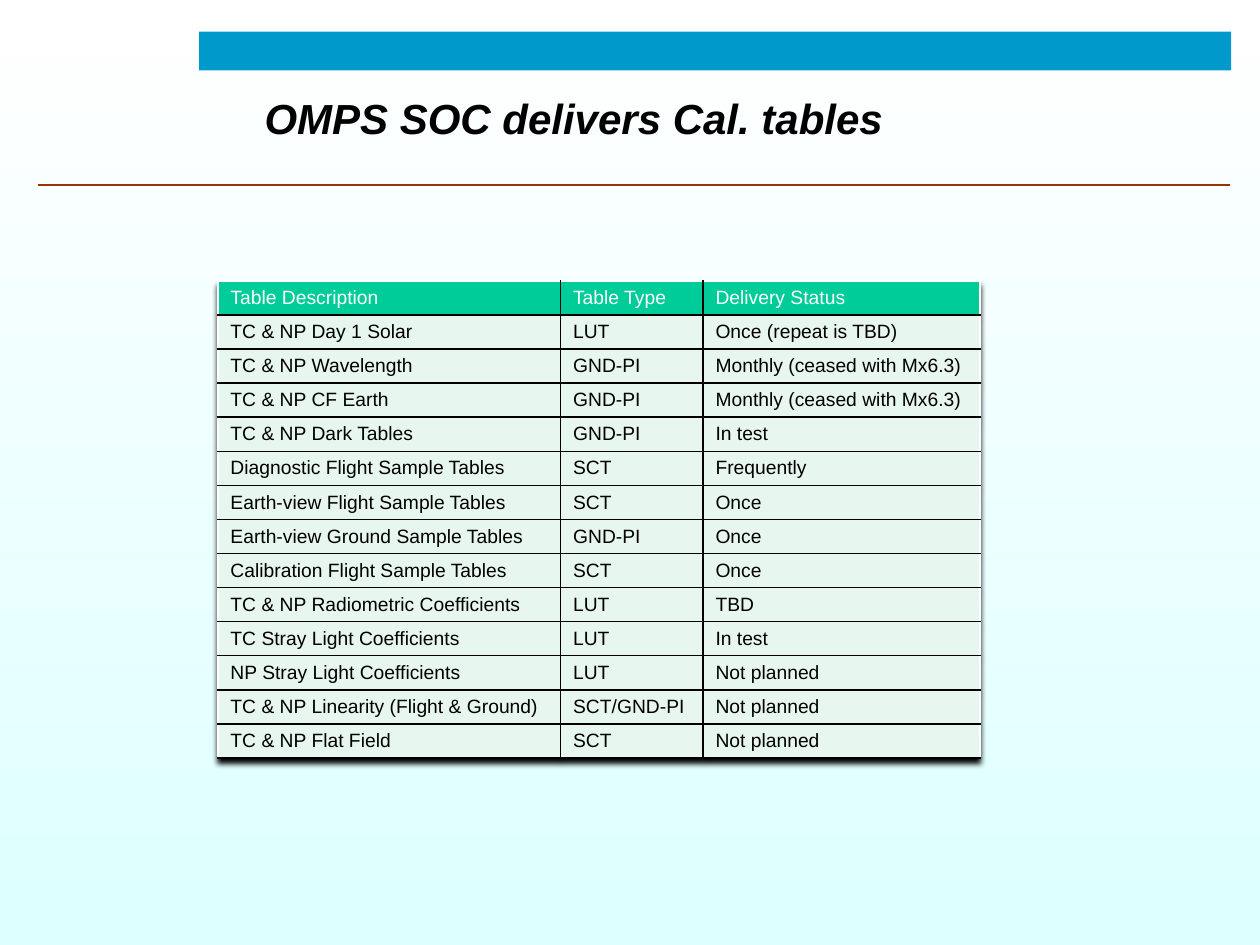
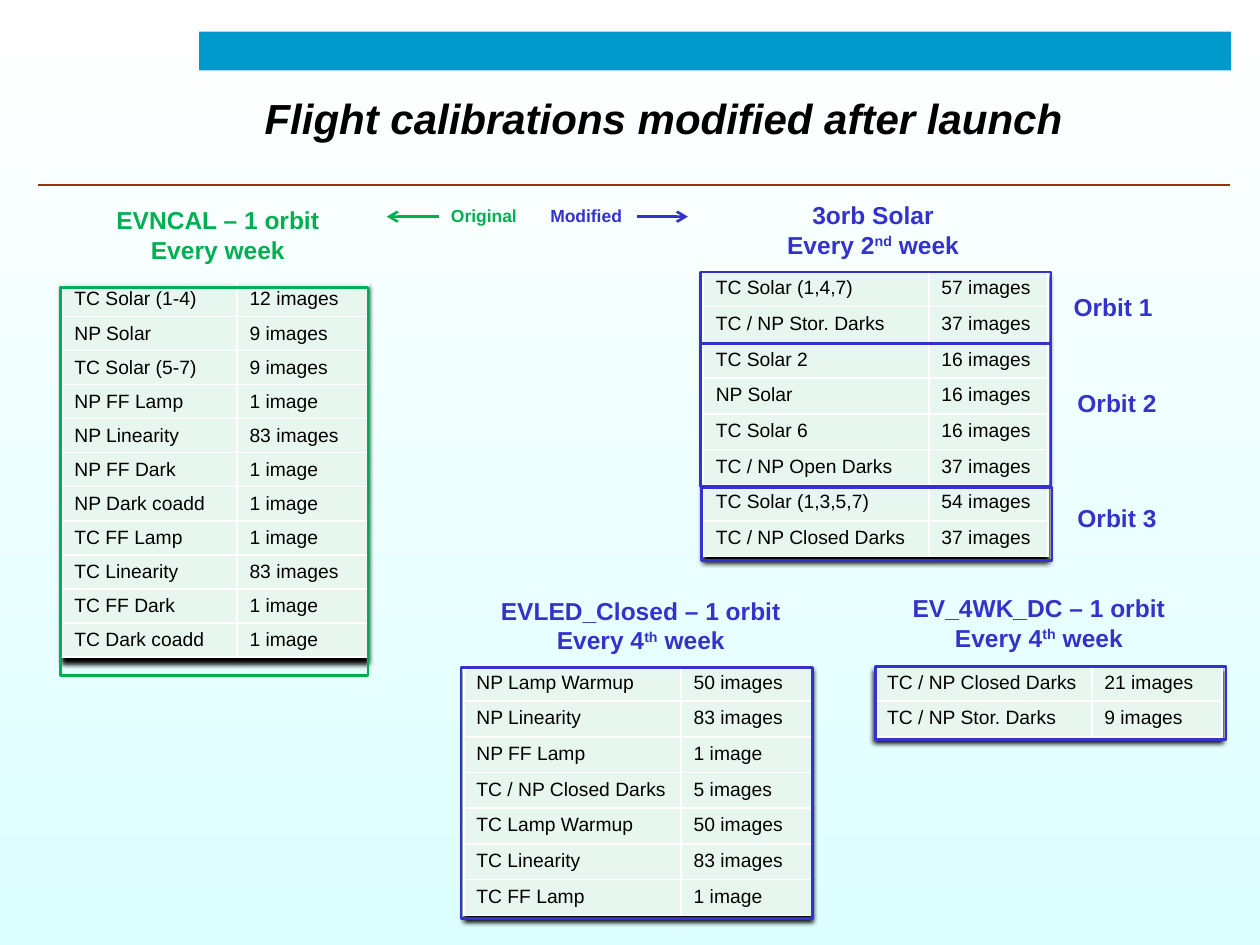
from dataclasses import dataclass
from itertools import product

import lxml.etree
import pptx
import pptx.dml.color
import pptx.enum.shapes
import pptx.enum.text
import pptx.oxml.ns
import pptx.util

Pt = pptx.util.Pt
qn = pptx.oxml.ns.qn
Align = pptx.enum.text.PP_ALIGN
Anchor = pptx.enum.text.MSO_ANCHOR
Fit = pptx.enum.text.MSO_AUTO_SIZE

# Shared look
FONT = "Arial"
BLACK, WHITE = "000000", "FFFFFF"
BLUE, GREEN = "3333CC", "00B050"
BAND, RULE = "0099CC", "993300"
HEAD, BODY, SKY = "00CC99", "E7F6EF", "DDFFFF"
PLAIN = "{2D5ABB26-0587-4C30-8999-92F81FD0307C}"


@dataclass
class Box:
    left: float
    top: float
    width: float
    height: float

    def place(self) -> tuple:
        return tuple(Pt(v) for v in (self.left, self.top, self.width, self.height))


@dataclass
class Grid:
    left: float
    top: float
    cols: tuple
    row: float
    cells: list
    head: bool = False


@dataclass
class Label:
    text: str
    box: Box
    color: str = BLUE
    size: float = 14
    align: int = Align.CENTER


@dataclass
class Frame:
    box: Box
    color: str = BLUE


@dataclass
class Arrow:
    start: float
    end: float
    color: str


def rgb(code: str) -> pptx.dml.color.RGBColor:
    return pptx.dml.color.RGBColor.from_string(code)


def sub(node, tag: str, **attrs):
    return lxml.etree.SubElement(node, qn(tag), attrs)


def write(frame, text: str, size: float = 11, color: str = BLACK,
          bold: bool = False, italic: bool = False, align=Align.LEFT) -> None:
    """Fill a text frame; a part between carets is raised."""
    for num, line in enumerate(text.split("\n")):
        para = frame.add_paragraph() if num else frame.paragraphs[0]
        para.alignment = align
        for pos, part in enumerate(line.split("^")):
            run = para.add_run()
            run.text = part
            font = run.font
            font.name, font.size = FONT, Pt(size)
            font.bold, font.italic = bold, italic
            font.color.rgb = rgb(color)
            if pos % 2:
                font._element.set("baseline", "30000")


def add_rect(slide, box: Box, fill: str = "", line: str = "") -> None:
    shape = slide.shapes.add_shape(
        pptx.enum.shapes.MSO_SHAPE.RECTANGLE, *box.place())
    shape.shadow.inherit = False
    if fill:
        shape.fill.solid()
        shape.fill.fore_color.rgb = rgb(fill)
    else:
        shape.fill.background()
    if line:
        shape.line.color.rgb = rgb(line)
        shape.line.width = Pt(1.5)
    else:
        shape.line.fill.background()


def add_line(slide, start: float, end: float, y: float, color: str,
             arrow: bool = False) -> None:
    line = slide.shapes.add_connector(
        pptx.enum.shapes.MSO_CONNECTOR.STRAIGHT, Pt(start), Pt(y), Pt(end), Pt(y))
    line.line.color.rgb = rgb(color)
    line.line.width = Pt(1.5)
    if arrow:
        sub(line.line._get_or_add_ln(), "a:tailEnd", type="arrow")
    sub(line._element.spPr, "a:effectLst")


def add_label(slide, label: Label) -> None:
    frame = slide.shapes.add_textbox(*label.box.place()).text_frame
    frame.word_wrap = True
    frame.auto_size = Fit.SHAPE_TO_FIT_TEXT
    write(frame, label.text, size=label.size, color=label.color, bold=True,
          align=label.align)


def add_edge(cell, side: str, color: str) -> None:
    edge = sub(cell._tc.get_or_add_tcPr(), f"a:ln{side}", w=str(Pt(1)))
    sub(sub(edge, "a:solidFill"), "a:srgbClr", val=color)


def add_grid(slide, grid: Grid) -> None:
    rows, cols = len(grid.cells), len(grid.cols)
    box = Box(grid.left, grid.top, sum(grid.cols), rows * grid.row)
    table = slide.shapes.add_table(rows, cols, *box.place()).table
    table.first_row = table.horz_banding = False

    # Plain style with a drop shadow
    props = table._tbl.tblPr
    props.find(qn("a:tableStyleId")).text = PLAIN
    glow = lxml.etree.Element(qn("a:effectLst"))
    props.insert(0, glow)
    shade = sub(glow, "a:outerShdw", blurRad=str(Pt(3)), dist=str(Pt(3)),
                dir="5400000", rotWithShape="0")
    sub(shade, "a:srgbClr", val=BLACK)

    for col, width in zip(table.columns, grid.cols):
        col.width = Pt(width)
    for row in table.rows:
        row.height = Pt(grid.row)
    inner = BLACK if grid.head else WHITE
    for r, c in product(range(rows), range(cols)):
        cell = table.cell(r, c)
        top = grid.head and r == 0
        outer = {"L": c == 0, "R": c == cols - 1, "T": r == 0, "B": False}
        for side, out in outer.items():
            add_edge(cell, side, WHITE if out else inner)
        cell.fill.solid()
        cell.fill.fore_color.rgb = rgb(HEAD if top else BODY)
        write(cell.text_frame, grid.cells[r][c], color=WHITE if top else BLACK)


def add_page(deck, title: str):
    slide = deck.slides.add_slide(deck.slide_layouts[5])
    add_line(slide, 21.6, 702.7, 105.84, RULE)
    add_rect(slide, Box(113.8, 18, 589.7, 22.3), fill=BAND)
    head = slide.shapes.title
    head.left, head.top, head.width, head.height = Box(144, 36, 498, 62.6).place()
    frame = head.text_frame
    frame.word_wrap = True
    frame.auto_size = Fit.NONE
    frame.vertical_anchor = Anchor.MIDDLE
    write(frame, title, size=24, bold=True, italic=True)
    return slide


def set_sky(deck) -> None:
    fill = deck.slide_master.background.fill
    fill.gradient()
    fill.gradient_angle = 270
    for stop, place, color in zip(fill.gradient_stops, (0, 1), (WHITE, SKY)):
        stop.position = place
        stop.color.rgb = rgb(color)


# Slide 1: delivered tables
TABLES = Grid(124.5, 160.5, (195.8, 81.4, 158.4), 19.47, [
    ("Table Description", "Table Type", "Delivery Status"),
    ("TC & NP Day 1 Solar", "LUT", "Once (repeat is TBD)"),
    ("TC & NP Wavelength", "GND-PI", "Monthly (ceased with Mx6.3)"),
    ("TC & NP CF Earth", "GND-PI", "Monthly (ceased with Mx6.3)"),
    ("TC & NP Dark Tables", "GND-PI", "In test"),
    ("Diagnostic Flight Sample Tables", "SCT", "Frequently"),
    ("Earth-view Flight Sample Tables", "SCT", "Once"),
    ("Earth-view Ground Sample Tables", "GND-PI", "Once"),
    ("Calibration Flight Sample Tables", "SCT", "Once"),
    ("TC & NP Radiometric Coefficients", "LUT", "TBD"),
    ("TC Stray Light Coefficients", "LUT", "In test"),
    ("NP Stray Light Coefficients", "LUT", "Not planned"),
    ("TC & NP Linearity (Flight & Ground)", "SCT/GND-PI", "Not planned"),
    ("TC & NP Flat Field", "SCT", "Not planned"),
], head=True)

# Slide 2: image counts by calibration
COUNTS = [
    Grid(35.3, 161.3, (100.1, 74.9), 19.47, [
        ("TC Solar (1-4)", "12 images"),
        ("NP Solar", "9 images"),
        ("TC Solar (5-7)", "9 images"),
        ("NP FF Lamp", "1 image"),
        ("NP Linearity", "83 images"),
        ("NP FF Dark", "1 image"),
        ("NP Dark coadd", "1 image"),
        ("TC FF Lamp", "1 image"),
        ("TC Linearity", "83 images"),
        ("TC FF Dark", "1 image"),
        ("TC Dark coadd", "1 image"),
    ]),
    Grid(401.8, 154.8, (129, 68), 20.43, [
        ("TC Solar (1,4,7)", "57 images"),
        ("TC / NP Stor. Darks", "37 images"),
        ("TC Solar 2", "16 images"),
        ("NP Solar", "16 images"),
        ("TC Solar 6", "16 images"),
        ("TC / NP Open Darks", "37 images"),
        ("TC Solar (1,3,5,7)", "54 images"),
        ("TC / NP Closed Darks", "37 images"),
    ]),
    Grid(265, 380.2, (124.2, 74.4), 20.43, [
        ("NP Lamp Warmup", "50 images"),
        ("NP Linearity", "83 images"),
        ("NP FF Lamp", "1 image"),
        ("TC / NP Closed Darks", "5 images"),
        ("TC Lamp Warmup", "50 images"),
        ("TC Linearity", "83 images"),
        ("TC FF Lamp", "1 image"),
    ]),
    Grid(499.7, 380.2, (124.2, 74.4), 20.43, [
        ("TC / NP Closed Darks", "21 images"),
        ("TC / NP Stor. Darks", "9 images"),
    ]),
]
FRAMES = [
    Frame(Box(400.4, 155.5, 200.2, 41)),
    Frame(Box(400.4, 196.6, 200.2, 81.5)),
    Frame(Box(401, 278.6, 200.2, 41.8)),
    Frame(Box(263.5, 381.6, 200.9, 143.3)),
    Frame(Box(500.4, 380.9, 200.2, 41.8)),
    Frame(Box(34.6, 164.2, 175.7, 221.8), GREEN),
]
LABELS = [
    Label("EVNCAL – 1 orbit\nEvery week", Box(55.4, 113.8, 138.2, 41), GREEN),
    Label("3orb Solar\nEvery 2^nd^ week", Box(429.8, 110.9, 138.2, 41)),
    Label("EVLED_Closed – 1 orbit\nEvery 4^th^ week", Box(272.9, 337, 186.5, 41)),
    Label("EV_4WK_DC – 1 orbit\nEvery 4^th^ week", Box(500.4, 335.5, 186.5, 41)),
    Label("Orbit 1", Box(602.6, 163.4, 67, 24.5)),
    Label("Orbit 2", Box(604.8, 218.2, 67, 24.5)),
    Label("Orbit 3", Box(604.8, 283.7, 67, 24.5)),
    Label("Original", Box(250.6, 113.8, 63.4, 19.4), GREEN, 10, Align.LEFT),
    Label("Modified", Box(307.4, 113.8, 57.6, 19.4), BLUE, 10, Align.LEFT),
]
ARROWS = [Arrow(364.3, 393.1, BLUE), Arrow(250.6, 221, GREEN)]


def main() -> None:
    deck = pptx.Presentation()
    deck.slide_width, deck.slide_height = Pt(720), Pt(540)
    set_sky(deck)

    add_grid(add_page(deck, "OMPS SOC delivers Cal. tables"), TABLES)

    slide = add_page(deck, "Flight calibrations modified after launch")
    for grid in COUNTS:
        add_grid(slide, grid)
    for frame in FRAMES:
        add_rect(slide, frame.box, line=frame.color)
    for label in LABELS:
        add_label(slide, label)
    for arrow in ARROWS:
        add_line(slide, arrow.start, arrow.end, 123.8, arrow.color, arrow=True)

    deck.save("out.pptx")


if __name__ == "__main__":
    main()
